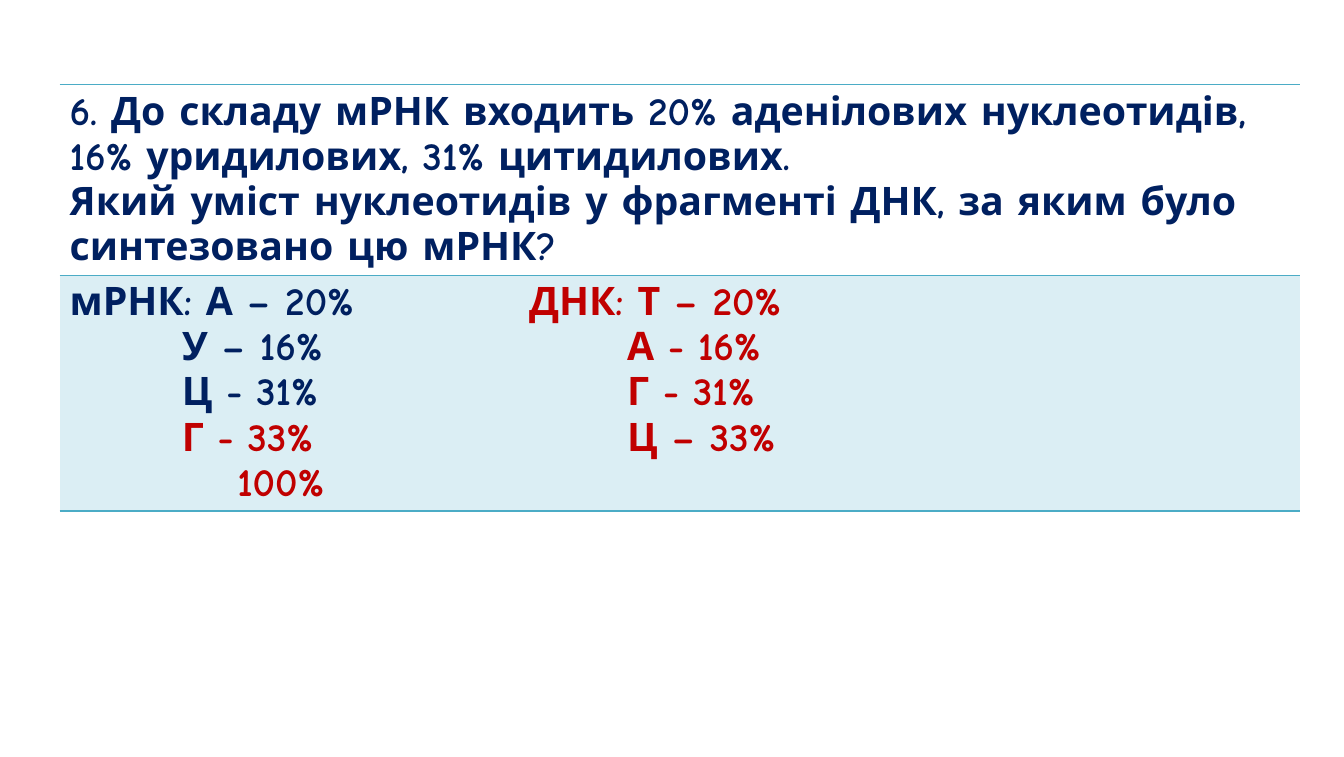
from lxml.etree import SubElement
from pptx import Presentation
from pptx.dml.color import RGBColor
from pptx.oxml.ns import qn
from pptx.util import Inches, Pt

NAVY, RED, TEAL, PALE_TEAL = "002060", "C00000", "4BACC6", "DBEEF4"
PLAIN_TABLE_STYLE = "{2D5ABB26-0587-4C30-8999-92F81FD0307C}"
BASE_INDENT = 1.11

QUESTION = [
    ("6. До складу мРНК входить 20% аденілових нуклеотидів,", NAVY, 0),
    ("16% уридилових, 31% цитидилових.", NAVY, 0),
    ("Який уміст нуклеотидів у фрагменті ДНК, за яким було синтезовано цю мРНК?", NAVY, 0),
]
MRNA = [
    ("мРНК: А – 20%", NAVY, 0),
    ("У – 16%", NAVY, BASE_INDENT),
    ("Ц - 31%", NAVY, BASE_INDENT),
    ("Г - 33%", RED, BASE_INDENT),
    ("100%", RED, 1.66),
]
DNA = [
    ("ДНК: Т – 20%", RED, 0.14),
    ("А - 16%", RED, BASE_INDENT),
    ("Г - 31%", RED, BASE_INDENT),
    ("Ц – 33%", RED, BASE_INDENT),
]


def color(value):
    return RGBColor.from_string(value)


def add_borders(cell, sides):
    properties = cell._tc.get_or_add_tcPr()
    for side in sides:
        border = SubElement(properties, qn(f"a:ln{side}"), w=str(Pt(1)))
        fill = SubElement(border, qn("a:solidFill"))
        SubElement(fill, qn("a:srgbClr"), val=TEAL)


def write_lines(cell, lines):
    frame = cell.text_frame
    for index, (text, ink, indent) in enumerate(lines):
        paragraph = frame.add_paragraph() if index else frame.paragraphs[0]
        paragraph.text = text
        paragraph.font.name = "Comic Neue"
        paragraph.font.size = Pt(28)
        paragraph.font.bold = True
        paragraph.font.color.rgb = color(ink)
        properties = paragraph._p.get_or_add_pPr()
        properties.set("marL", str(Inches(indent)))
        properties.set("indent", "0")


def add_problem_table(slide, left, top, width, height):
    table = slide.shapes.add_table(
        2, 2, Inches(left), Inches(top), Inches(width), Inches(height)
    ).table
    table.first_row = table.horz_banding = False
    table._tbl.tblPr.find(qn("a:tableStyleId")).text = PLAIN_TABLE_STYLE

    mrna_width, question_height = 4.41, 1.88
    table.columns[0].width = Inches(mrna_width)
    table.columns[1].width = Inches(width - mrna_width)
    table.rows[0].height = Inches(question_height)
    table.rows[1].height = Inches(height - question_height)

    question = table.cell(0, 0)
    question.merge(table.cell(0, 1))
    write_lines(question, QUESTION)
    for cell in table.rows[0].cells:
        add_borders(cell, "TB")
        cell.fill.background()

    for cell, lines in zip(table.rows[1].cells, (MRNA, DNA)):
        write_lines(cell, lines)
        add_borders(cell, "TB")
        cell.fill.solid()
        cell.fill.fore_color.rgb = color(PALE_TEAL)


def main():
    presentation = Presentation()
    presentation.slide_width = Inches(13.31)
    presentation.slide_height = Inches(7.5)
    slide = presentation.slides.add_slide(presentation.slide_layouts[6])
    add_problem_table(slide, 0.59, 0.84, 12.28, 4.21)
    presentation.save("out.pptx")


if __name__ == "__main__":
    main()
